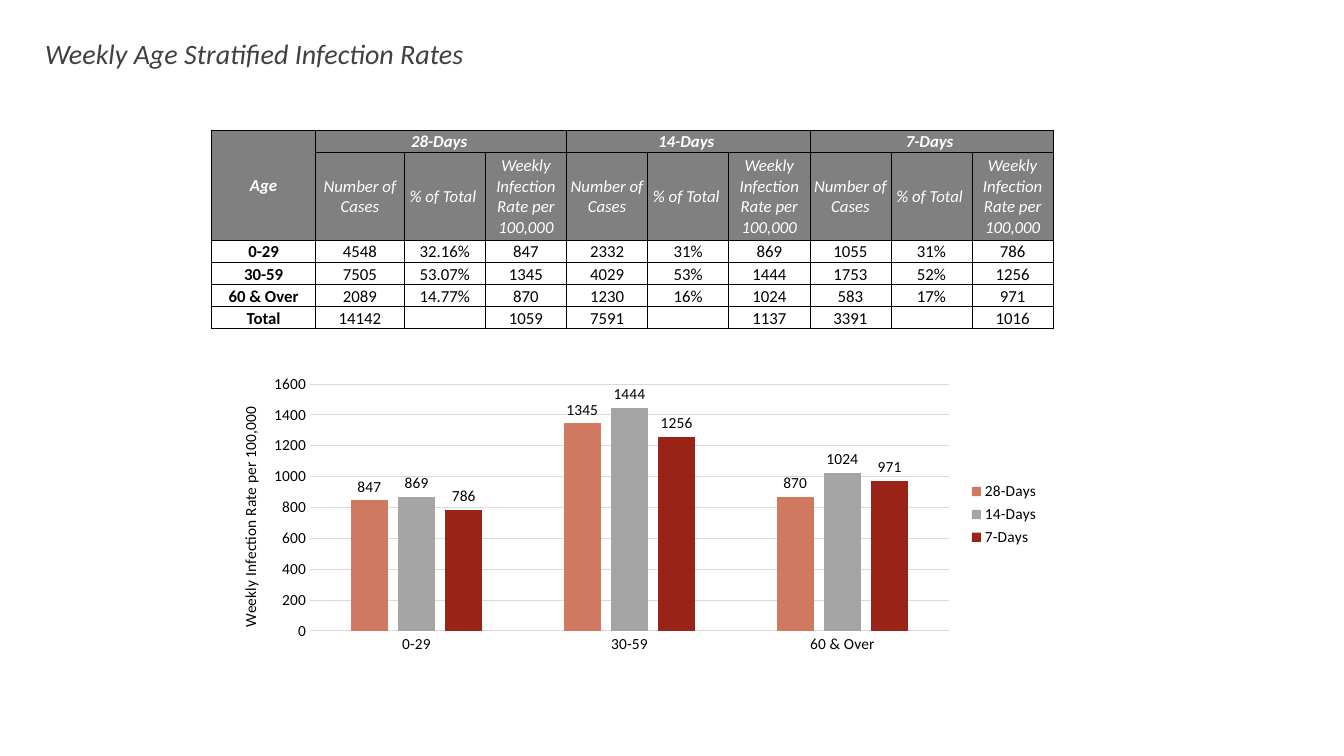
import lxml.etree
import pptx
import pptx.chart.data
import pptx.dml.color
import pptx.enum.chart
import pptx.enum.text
import pptx.oxml.ns
import pptx.util

Pt = pptx.util.Pt
qn = pptx.oxml.ns.qn

COLORS = {
    "title": "404040", "text": "000000", "white": "FFFFFF", "header": "808080",
    "grid": "D9D9D9", "28-Days ": "CF7961", "14-Days": "A5A5A5", "7-Days": "992317",
}

# Content
AGES = ["0-29", "30-59", "60 & Over"]
PERIODS = ["28-Days ", "14-Days ", "7-Days "]
MEASURES = ["Number of Cases", "% of Total ", "Weekly Infection Rate per 100,000"]
BODY = [
    ["0-29", "4548", "32.16%", "847", "2332", "31%", "869", "1055", "31%", "786"],
    ["30-59", "7505", "53.07%", "1345", "4029", "53%", "1444", "1753", "52%", "1256"],
    ["60 & Over", "2089", "14.77%", "870", "1230", "16%", "1024", "583", "17%", "971"],
    ["Total", "14142", "", "1059", "7591", "", "1137", "3391", "", "1016"],
]
RATES = {
    "28-Days ": [847, 1345, 870],
    "14-Days": [869, 1444, 1024],
    "7-Days": [786, 1256, 971],
}


def rgb(name):
    return pptx.dml.color.RGBColor.from_string(COLORS[name])


class SlideBuilder:
    def __init__(self, slide, font="Calibri"):
        self.slide = slide
        self.font = font

    def style(self, font, size, color, bold=False, italic=False):
        font.name, font.size = self.font, Pt(size)
        font.bold, font.italic = bold, italic
        font.color.rgb = rgb(color)

    def run(self, paragraph, text, size, color, bold=False, italic=False):
        run = paragraph.add_run()
        run.text = text
        self.style(run.font, size, color, bold, italic)

    def line(self, line_format, color):
        line_format.color.rgb = rgb(color)
        line_format.width = Pt(0.75)

    def text(self, box, text, size, color, italic=False):
        frame = self.slide.shapes.add_textbox(*map(Pt, box)).text_frame
        frame.word_wrap = True
        frame.auto_size = pptx.enum.text.MSO_AUTO_SIZE.SHAPE_TO_FIT_TEXT
        self.run(frame.paragraphs[0], text, size, color, italic=italic)

    def table(self, left, top, widths, heights):
        table = self.slide.shapes.add_table(
            len(heights), len(widths), Pt(left), Pt(top),
            Pt(sum(widths)), Pt(sum(heights))).table
        table.first_row = table.horz_banding = False
        for column, width in zip(table.columns, widths):
            column.width = Pt(width)
        for row, height in zip(table.rows, heights):
            row.height = Pt(height)
        return table

    def borders(self, cell):
        for side in ("a:lnL", "a:lnR", "a:lnT", "a:lnB"):
            edge = lxml.etree.SubElement(
                cell._tc.get_or_add_tcPr(), qn(side), w=str(Pt(0.5)))
            fill = lxml.etree.SubElement(edge, qn("a:solidFill"))
            lxml.etree.SubElement(fill, qn("a:srgbClr"), val=COLORS["text"])

    def cell(self, cell, text, header=False, bold=False):
        cell.margin_left = cell.margin_right = cell.margin_top = Pt(0.72)
        cell.margin_bottom = 0
        self.borders(cell)
        anchor = pptx.enum.text.MSO_ANCHOR
        if header:
            cell.vertical_anchor = anchor.MIDDLE
            cell.fill.solid()
            cell.fill.fore_color.rgb = rgb("header")
        else:
            cell.vertical_anchor = anchor.BOTTOM
            cell.fill.background()
        paragraph = cell.text_frame.paragraphs[0]
        paragraph.alignment = pptx.enum.text.PP_ALIGN.CENTER
        if text:
            color = "white" if header else "text"
            self.run(paragraph, text, 12, color, bold, header)
        else:
            # An empty cell must not stretch its row
            lxml.etree.SubElement(paragraph._p, qn("a:endParaRPr"), sz="1200")

    def layout(self, parent, index, **values):
        layout = parent.find(qn("c:layout"))
        if layout is not None:
            parent.remove(layout)
        layout = lxml.etree.Element(qn("c:layout"))
        parent.insert(index, layout)
        manual = lxml.etree.SubElement(layout, qn("c:manualLayout"))
        for tag, value in values.items():
            lxml.etree.SubElement(manual, qn("c:" + tag), val=str(value))

    def column_chart(self, box, categories, series, axis_title):
        kinds = pptx.enum.chart
        data = pptx.chart.data.CategoryChartData(number_format="0")
        data.categories = categories
        for name, values in series.items():
            data.add_series(name, values)
        chart = self.slide.shapes.add_chart(
            kinds.XL_CHART_TYPE.COLUMN_CLUSTERED, *map(Pt, box), data).chart
        chart.has_title = False
        self.style(chart.font, 11, "text")

        # Columns and labels
        plot = chart.plots[0]
        plot.gap_width, plot.overlap, plot.vary_by_categories = 219, -27, False
        for columns in plot.series:
            columns.format.fill.solid()
            columns.format.fill.fore_color.rgb = rgb(columns.name)
            labels = columns.data_labels
            labels.show_value = True
            labels.number_format, labels.number_format_is_linked = "0", False
            labels.position = kinds.XL_LABEL_POSITION.OUTSIDE_END
            self.style(labels.font, 11, "text")

        # Axes
        ages, rates = chart.category_axis, chart.value_axis
        for axis in (ages, rates):
            axis.major_tick_mark = axis.minor_tick_mark = kinds.XL_TICK_MARK.NONE
            self.style(axis.tick_labels.font, 11, "text")
        self.line(ages.format.line, "grid")
        self.line(rates.major_gridlines.format.line, "grid")
        rates.format.line.fill.background()
        rates.minimum_scale, rates.maximum_scale, rates.major_unit = 0, 1600, 200
        rates.tick_labels.number_format = "0"
        rates.tick_labels.number_format_is_linked = False
        title_frame = rates.axis_title.text_frame
        self.run(title_frame.paragraphs[0], axis_title, 11, "text")
        title_frame._txBody.bodyPr.set("rot", "-5400000")
        title_frame._txBody.bodyPr.set("vert", "horz")

        # Legend and placement
        chart.has_legend = True
        chart.legend.position = kinds.XL_LEGEND_POSITION.RIGHT
        chart.legend.include_in_layout = False
        self.style(chart.legend.font, 11, "text")
        self.layout(rates.axis_title._element, 1,
                    xMode="edge", yMode="edge", x=0.03, y=0.12)
        self.layout(chart._chartSpace.chart.plotArea, 0, layoutTarget="inner",
                    xMode="edge", yMode="edge", x=0.117, y=0.052, w=0.759, h=0.848)


def main():
    presentation = pptx.Presentation()
    presentation.slide_width, presentation.slide_height = Pt(960), Pt(540)
    builder = SlideBuilder(
        presentation.slides.add_slide(presentation.slide_layouts[6]))

    # Title
    builder.text((25.2, 22.3, 427, 31.5), "Weekly Age Stratified Infection Rates",
                 20, "title", italic=True)

    # Infection table
    infections = builder.table(151.2, 92.9, [74.2, 63.4] + [57.95] * 8,
                               [15.8, 63] + [15.8] * 4)
    period_row = ["Age"] + [text for period in PERIODS for text in (period, "", "")]
    measure_row = [""] + MEASURES * len(PERIODS)
    for r, row in enumerate([period_row, measure_row] + BODY):
        for c, text in enumerate(row):
            builder.cell(infections.cell(r, c), text, header=r < 2,
                         bold=r == 0 or c == 0)
    infections.cell(0, 0).merge(infections.cell(1, 0))
    for first in range(1, 10, len(MEASURES)):
        infections.cell(0, first).merge(infections.cell(0, first + 2))

    # Rate chart
    builder.column_chart((151.2, 263.5, 601.2, 208), AGES, RATES, MEASURES[-1])

    presentation.save("out.pptx")


if __name__ == "__main__":
    main()
